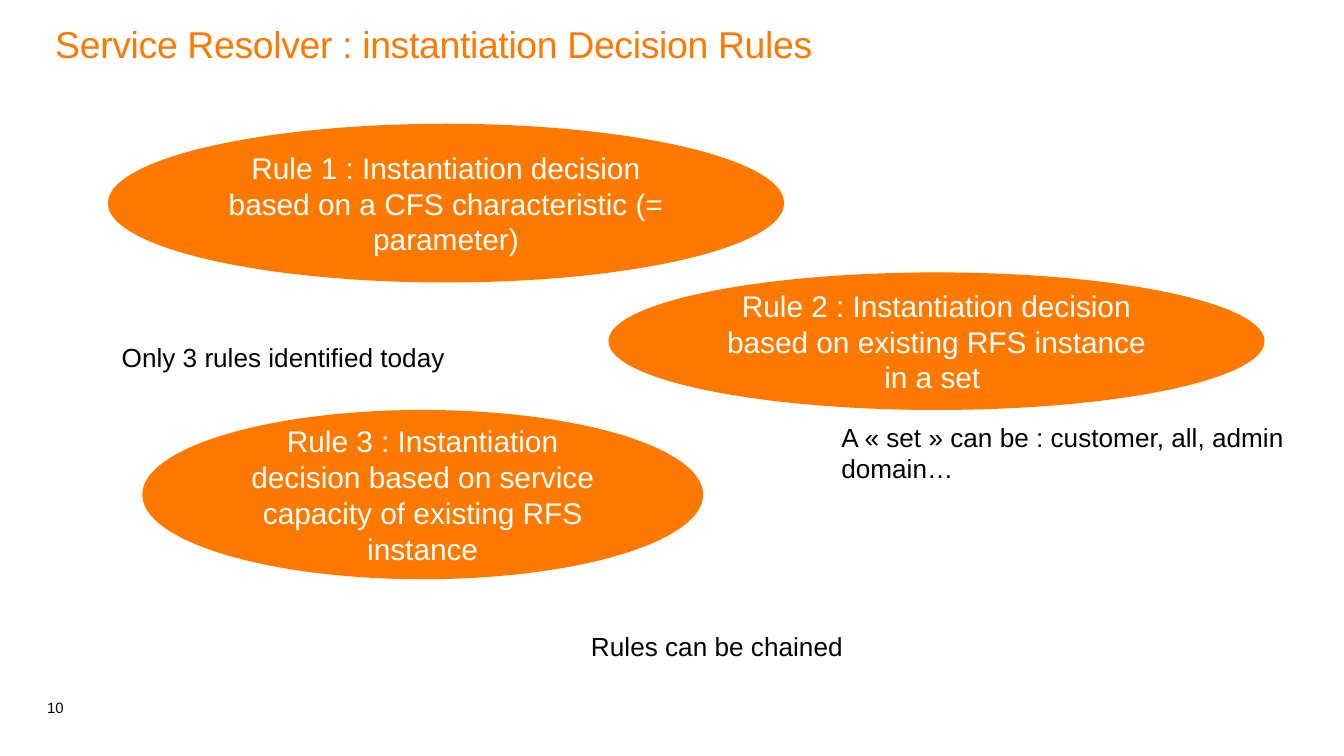
from dataclasses import dataclass

from pptx import Presentation
from pptx.dml.color import RGBColor
from pptx.enum.shapes import MSO_SHAPE as Shape
from pptx.enum.text import MSO_ANCHOR as Anchor, MSO_AUTO_SIZE as AutoSize, PP_ALIGN as Align
from pptx.shapes.autoshape import Shape as Box
from pptx.slide import Slide
from pptx.text.text import TextFrame
from pptx.util import Cm, Pt

ORANGE = "FF7900"
WHITE = "FFFFFF"
BLACK = "000000"


@dataclass(frozen=True)
class Label:
    text: str
    left: float
    top: float
    width: float
    height: float


RULES = [
    Label("Rule 1 : Instantiation decision based on a CFS characteristic (= parameter)",
          2.04, 2.34, 12.78, 3),
    Label("Rule 2 : Instantiation decision based on existing RFS instance in a set ",
          11.5, 5.15, 12.4, 2.6),
    Label("Rule 3 : Instantiation decision based on service capacity of existing RFS instance",
          2.69, 7.75, 10.6, 3.2),
]
NOTES = [
    Label("Rules can be chained", 11.17, 11.91, 7.3, 0.6),
    Label("Only 3 rules identified today", 2.3, 6.46, 8.5, 0.6),
    Label("A « set » can be : customer, all, admin domain…", 15.9, 7.96, 8.5, 1.2),
]
TITLE = Label("Service Resolver : instantiation Decision Rules", 0.79, 0.36, 23.65, 2.06)
NUMBER = Label("10", 0.86, 12.6, 0.76, 0.94)


def colour(value: str) -> RGBColor:
    return RGBColor.from_string(value)


def write(frame: TextFrame, text: str, size: float, shade: str,
          align: Align = Align.LEFT, anchor: Anchor = Anchor.TOP, spacing: float = 1.0):
    frame.word_wrap = True
    frame.auto_size = AutoSize.NONE
    frame.vertical_anchor = anchor
    para = frame.paragraphs[0]
    para.alignment = align
    para.line_spacing = spacing
    para.space_before = Pt(0)
    span = para.add_run()
    span.text = text
    span.font.name = "Arial"
    span.font.size = Pt(size)
    span.font.color.rgb = colour(shade)
    return span


def place(label: Label) -> tuple[Cm, Cm, Cm, Cm]:
    return Cm(label.left), Cm(label.top), Cm(label.width), Cm(label.height)


def add_title(page: Slide, label: Label) -> None:
    title = page.shapes.title
    title.left, title.top, title.width, title.height = place(label)
    span = write(title.text_frame, label.text, 20, ORANGE, spacing=0.9)
    span.font._element.set("spc", "-20")


def add_rule(page: Slide, label: Label) -> None:
    oval = page.shapes.add_shape(Shape.OVAL, *place(label))
    oval.shadow.inherit = False
    oval.fill.solid()
    oval.fill.fore_color.rgb = colour(ORANGE)
    oval.line.fill.background()
    write(oval.text_frame, label.text, 16, WHITE, Align.CENTER, Anchor.MIDDLE)


def add_plain_box(page: Slide, label: Label) -> Box:
    box = page.shapes.add_textbox(*place(label))
    frame = box.text_frame
    frame.margin_left = frame.margin_top = frame.margin_right = frame.margin_bottom = 0
    return box


def add_note(page: Slide, label: Label) -> None:
    frame = add_plain_box(page, label).text_frame
    write(frame, label.text, 14, BLACK)
    frame.auto_size = AutoSize.SHAPE_TO_FIT_TEXT


def add_number(page: Slide, label: Label) -> None:
    frame = add_plain_box(page, label).text_frame
    frame.margin_left = Cm(0.03)
    write(frame, label.text, 8, BLACK, anchor=Anchor.BOTTOM, spacing=0.85)
    frame.paragraphs[0].space_after = Pt(12)


def main() -> None:
    deck = Presentation()
    deck.slide_width, deck.slide_height = Cm(25.4), Cm(14.29)
    page = deck.slides.add_slide(deck.slide_layouts.get_by_name("Title Only"))
    add_number(page, NUMBER)
    add_title(page, TITLE)
    for rule in RULES:
        add_rule(page, rule)
    for note in NOTES:
        add_note(page, note)
    deck.save("out.pptx")


if __name__ == "__main__":
    main()
